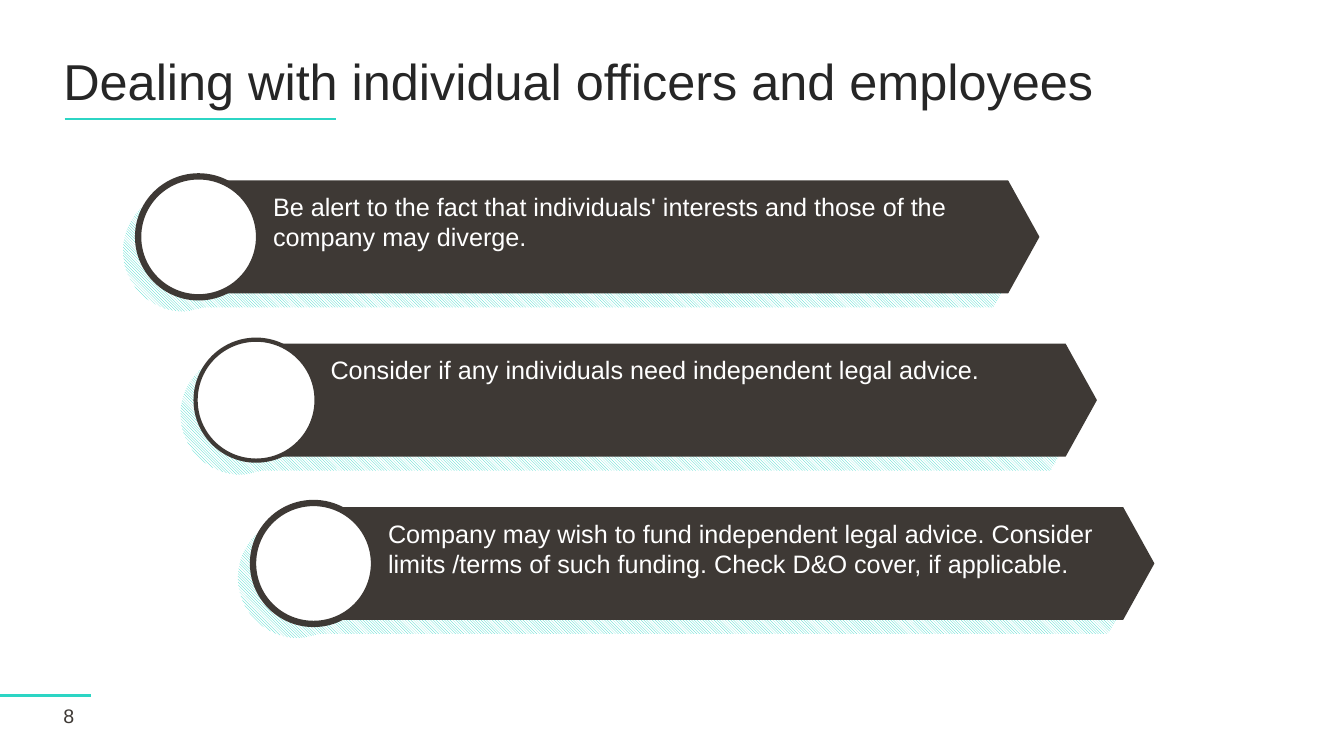
from dataclasses import dataclass

from lxml import etree
from pptx import Presentation
from pptx import util as u
from pptx.dml.color import RGBColor
from pptx.enum import dml, shapes, text
from pptx.oxml.ns import qn


@dataclass(frozen=True)
class Theme:
    font: str = "Arial"
    title_size: float = 36
    body_size: float = 18
    number_size: float = 14
    title: RGBColor = RGBColor(0x26, 0x26, 0x26)
    dark: RGBColor = RGBColor(0x3E, 0x39, 0x35)
    accent: RGBColor = RGBColor(0x2C, 0xD5, 0xC4)
    white: RGBColor = RGBColor(0xFF, 0xFF, 0xFF)


THEME = Theme()

# Staircase grid: each row moves right by one column and down by one row.
FIRST_LEFT, FIRST_TOP = 1.37, 1.75
COLUMN, ROW = 0.57, 1.62
CIRCLE = 1.2

# Message, text height, circle line width
MESSAGES = [
    ("Be alert to the fact that individuals' interests and those of the "
     "company may diverge.", 0.71, 4.5),
    ("Consider if any individuals need independent legal advice.", 0.4, 3),
    ("Company may wish to fund independent legal advice. Consider limits "
     "/terms of such funding. Check D&O cover, if applicable.", 0.71, 4.5),
]

# Outlines relative to the circle's top left corner
BANNER = [(0.64, 0.04), (6.11, 0.04), (8.63, 0.04), (8.94, 0.6),
          (8.63, 1.16), (6.11, 1.16), (0.89, 1.16), (0.64, 1.16)]
SHADOW = [(0.6, 0), (0.64, 0), (0.68, 0), (0.72, 0.01),
          (0.81, 0.04), (6.11, 0.04), (8.63, 0.04), (8.95, 0.6),
          (8.63, 1.16), (6.11, 1.16), (0.89, 1.16), (0.81, 1.16),
          (0.72, 1.18), (0.68, 1.19), (0.64, 1.2), (0.6, 1.2),
          (0.27, 1.2), (0, 0.93), (0, 0.6),
          (0, 0.27), (0.27, 0), (0.6, 0)]
SHADOW_CURVES = (0, 12, 15, 18)  # points from which a curve starts
SHADOW_SHIFT = (-0.15, 0.14)


def add_line(slide, start, end):
    ends = [u.Inches(value) for value in (*start, *end)]
    line = slide.shapes.add_connector(shapes.MSO_CONNECTOR.STRAIGHT, *ends)
    line.line.color.rgb = THEME.accent
    line.line.width = u.Pt(1.5)
    etree.SubElement(line.element.spPr, qn("a:effectLst"))


def add_text(container, box, words, size, color, anchor=text.MSO_ANCHOR.TOP,
             line_spacing=None):
    frame = container.shapes.add_textbox(*map(u.Inches, box)).text_frame
    frame.word_wrap = True
    frame.vertical_anchor = anchor
    paragraph = frame.paragraphs[0]
    paragraph.line_spacing = line_spacing
    run = paragraph.add_run()
    run.text = words
    run.font.name = THEME.font
    run.font.size = u.Pt(size)
    run.font.color.rgb = color
    return frame


def bend(shape, curve_starts):
    """Turn the three segments after each start point into one Bezier curve."""
    segments = list(shape.element.iter(qn("a:lnTo")))
    for start in curve_starts:
        first, *others = segments[start:start + 3]
        curve = etree.Element(qn("a:cubicBezTo"))
        first.addprevious(curve)
        for segment in (first, *others):
            curve.append(segment[0])
            segment.getparent().remove(segment)


def add_outline(container, points, left, top):
    corners = [(u.Inches(left + x), u.Inches(top + y)) for x, y in points]
    builder = container.shapes.build_freeform(*corners[0])
    builder.add_line_segments(corners[1:], close=True)
    shape = builder.convert_to_shape()
    shape.shadow.inherit = False
    shape.line.fill.background()
    return shape


def add_circle(container, left, top, line_width):
    circle = container.shapes.add_shape(
        shapes.MSO_SHAPE.OVAL,
        *map(u.Inches, (left, top, CIRCLE, CIRCLE)))
    circle.shadow.inherit = False
    circle.fill.solid()
    circle.fill.fore_color.rgb = THEME.white
    circle.line.color.rgb = THEME.dark
    circle.line.width = u.Pt(line_width)


def add_banner(slide, index, message, text_height, line_width):
    group = slide.shapes.add_group_shape()
    left = FIRST_LEFT + index * COLUMN
    top = FIRST_TOP + index * ROW

    shift_x, shift_y = SHADOW_SHIFT
    hatch = add_outline(group, SHADOW, left + shift_x, top + shift_y)
    bend(hatch, SHADOW_CURVES)
    hatch.fill.patterned()
    hatch.fill.pattern = dml.MSO_PATTERN.DARK_DOWNWARD_DIAGONAL
    hatch.fill.fore_color.rgb = THEME.accent
    hatch.fill.back_color.rgb = THEME.white

    bar = add_outline(group, BANNER, left, top)
    bar.fill.solid()
    bar.fill.fore_color.rgb = THEME.dark

    frame = add_text(group, (left + 1.24, top + 0.1, 7.45, text_height),
                     message, THEME.body_size, THEME.white)
    frame.auto_size = text.MSO_AUTO_SIZE.SHAPE_TO_FIT_TEXT
    add_circle(group, left, top, line_width)


def main():
    presentation = Presentation()
    presentation.slide_width = u.Inches(13.33)
    presentation.slide_height = u.Inches(7.5)
    slide = presentation.slides.add_slide(presentation.slide_layouts[6])

    add_line(slide, (0.64, 1.18), (3.33, 1.18))
    add_line(slide, (0, 6.9), (0.9, 6.9))
    add_text(slide, (0.53, 0.4, 12.24, 0.88),
             "Dealing with individual officers and employees",
             THEME.title_size, THEME.title, text.MSO_ANCHOR.MIDDLE, 0.9)
    add_text(slide, (0.53, 6.98, 0.57, 0.24), "8",
             THEME.number_size, THEME.dark, text.MSO_ANCHOR.MIDDLE)
    for index, (message, text_height, line_width) in enumerate(MESSAGES):
        add_banner(slide, index, message, text_height, line_width)

    presentation.save("out.pptx")


if __name__ == "__main__":
    main()
